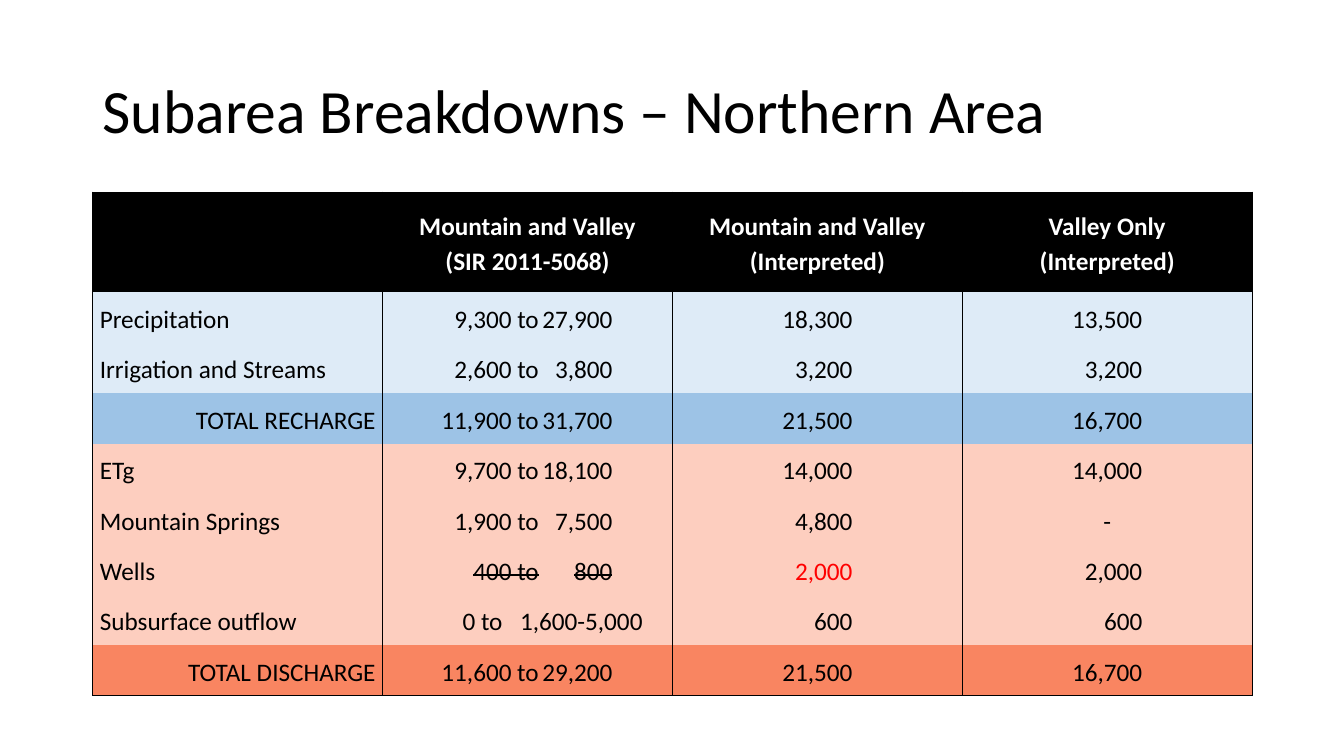
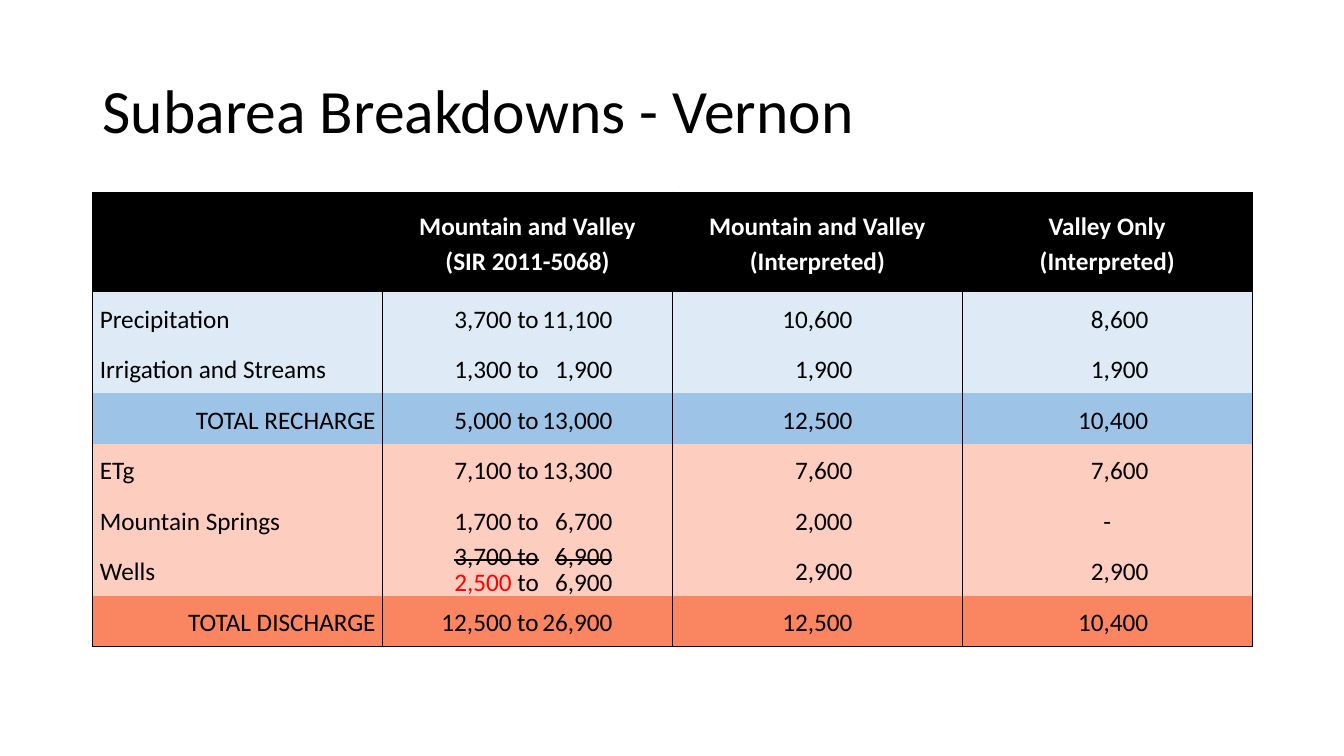
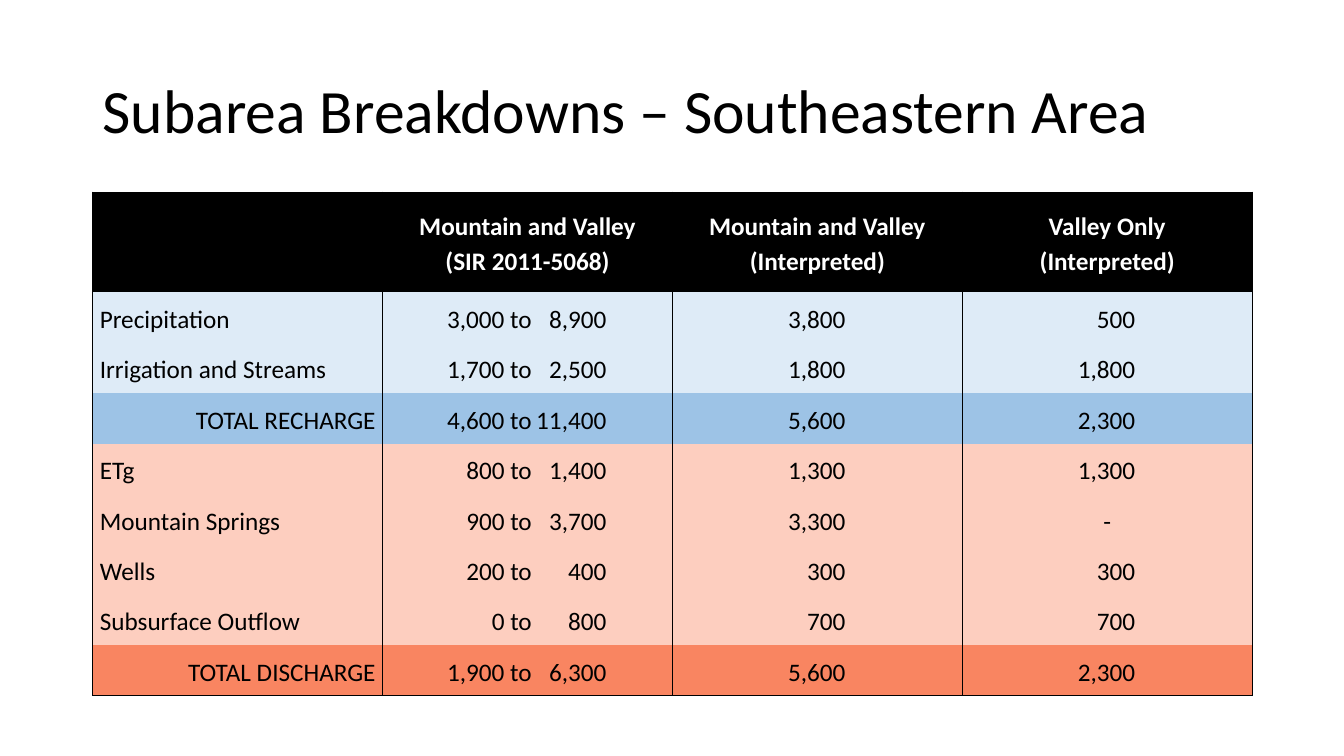
import pptx
import pptx.dml.color
import pptx.enum.text
import pptx.oxml
import pptx.oxml.ns
import pptx.util

Inches = pptx.util.Inches
Pt = pptx.util.Pt
RGBColor = pptx.dml.color.RGBColor
Align = pptx.enum.text.PP_ALIGN
Anchor = pptx.enum.text.MSO_ANCHOR

BLACK = RGBColor(0x00, 0x00, 0x00)
WHITE = RGBColor(0xFF, 0xFF, 0xFF)
RED = RGBColor(0xFF, 0x00, 0x00)
PALE_BLUE = RGBColor(0xDE, 0xEB, 0xF7)
BLUE = RGBColor(0x9D, 0xC3, 0xE6)
PALE_CORAL = RGBColor(0xFD, 0xCE, 0xBF)
CORAL = RGBColor(0xF9, 0x85, 0x61)

FONT = "Calibri"
PLAIN = {}
STRUCK = {"struck": True}
CORRECTED = {"colour": RED}
PLAIN_TABLE_STYLE = "{2D5ABB26-0587-4C30-8999-92F81FD0307C}"

HEADINGS = [
    [],
    ["Mountain and Valley", "(SIR 2011-5068)"],
    ["Mountain and Valley", "(Interpreted)"],
    ["Valley Only", "(Interpreted)"],
]

SUBAREAS = [
    {
        "title": "Subarea Breakdowns – Northern Area",
        "range_stops": (1.48, 2.21),
        "value_margins": (1.09, 1.09),
        "recharge": [
            ("Precipitation", "9,300 to\t27,900", "18,300", "13,500"),
            ("Irrigation and Streams", "2,600 to\t3,800", "3,200", "3,200"),
            ("TOTAL RECHARGE", "11,900 to\t31,700", "21,500", "16,700"),
        ],
        "discharge": [
            ("ETg", "9,700 to\t18,100", "14,000", "14,000"),
            ("Mountain Springs", "1,900 to\t7,500", "4,800", "-"),
            ("Wells", [[("400 to\t800", STRUCK)]], [[("2,000", CORRECTED)]], "2,000"),
            ("Subsurface outflow", "0 to\t1,600-5,000", "600", "600"),
            ("TOTAL DISCHARGE", "11,600 to\t29,200", "21,500", "16,700"),
        ],
        "special_stops": {"Subsurface outflow": (1.12, 2.51)},
    },
    {
        "title": "Subarea Breakdowns - Vernon",
        "range_stops": (1.48, 2.21),
        "value_margins": (1.09, 1.03),
        "recharge": [
            ("Precipitation", "3,700 to\t11,100", "10,600", "8,600"),
            ("Irrigation and Streams", "1,300 to\t1,900", "1,900", "1,900"),
            ("TOTAL RECHARGE", "5,000 to\t13,000", "12,500", "10,400"),
        ],
        "discharge": [
            ("ETg", "7,100 to\t13,300", "7,600", "7,600"),
            ("Mountain Springs", "1,700 to\t6,700", "2,000", "-"),
            ("Wells", [[("3,700 to\t6,900", STRUCK)],
                       [("2,500", CORRECTED), (" to\t6,900", PLAIN)]], "2,900", "2,900"),
            ("TOTAL DISCHARGE", "12,500 to\t26,900", "12,500", "10,400"),
        ],
        "special_stops": {},
    },
    {
        "title": "Subarea Breakdowns – Southeastern Area",
        "range_stops": (1.41, 2.15),
        "value_margins": (1.16, 1.16),
        "recharge": [
            ("Precipitation", "3,000 to\t8,900", "3,800", "500"),
            ("Irrigation and Streams", "1,700 to\t2,500", "1,800", "1,800"),
            ("TOTAL RECHARGE", "4,600 to\t11,400", "5,600", "2,300"),
        ],
        "discharge": [
            ("ETg", "800 to\t1,400", "1,300", "1,300"),
            ("Mountain Springs", "900 to\t3,700", "3,300", "-"),
            ("Wells", "200 to\t400", "300", "300"),
            ("Subsurface Outflow", "0 to\t800", "700", "700"),
            ("TOTAL DISCHARGE", "1,900 to\t6,300", "5,600", "2,300"),
        ],
        "special_stops": {},
    },
]


def add_span(para, text, size=18, colour=BLACK, bold=False, struck=False):
    span = para.add_run()
    span.text = text
    span.font.name = FONT
    span.font.size = Pt(size)
    span.font.bold = bold
    span.font.color.rgb = colour
    if struck:
        span.font._element.set("strike", "sngStrike")


def add_tab_stops(para, stops):
    tabs = "".join(f'<a:tab pos="{Inches(stop)}" algn="r"/>' for stop in stops)
    para._p.get_or_add_pPr().append(pptx.oxml.parse_xml(
        f'<a:tabLst {pptx.oxml.ns.nsdecls("a")}>{tabs}</a:tabLst>'))


def format_cell(cell, fill, sides):
    cell.fill.solid()
    cell.fill.fore_color.rgb = fill
    cell.vertical_anchor = Anchor.MIDDLE
    cell.margin_left = cell.margin_right = Inches(0.07)
    cell.margin_top = cell.margin_bottom = 0
    for order, side in enumerate(sides):
        cell._tc.tcPr.insert(order, pptx.oxml.parse_xml(
            f'<a:ln{side} {pptx.oxml.ns.nsdecls("a")} w="{Pt(1)}"><a:solidFill>'
            f'<a:srgbClr val="{BLACK}"/></a:solidFill></a:ln{side}>'))


def write_cell(cell, lines, align, stops=(), **style):
    for number, line in enumerate(lines):
        frame = cell.text_frame
        para = frame.add_paragraph() if number else frame.paragraphs[0]
        para.alignment = align
        para.line_spacing = 0.85 if stops and len(lines) > 1 else 1.15
        if stops:
            add_tab_stops(para, stops)
            add_span(para, "\t")
        for text, look in line:
            add_span(para, text, **{**style, **look})


def as_lines(content):
    return [[(content, PLAIN)]] if isinstance(content, str) else content


def add_title(page, title):
    box = page.shapes.add_textbox(Inches(0.92), Inches(0.4), Inches(11.5), Inches(1.45))
    box.text_frame.word_wrap = True
    box.text_frame.vertical_anchor = Anchor.MIDDLE
    para = box.text_frame.paragraphs[0]
    para.line_spacing = 0.9
    add_span(para, title, size=44)


def add_budget_table(page, subarea):
    rows = []
    for part, fill, total_fill in (("recharge", PALE_BLUE, BLUE),
                                   ("discharge", PALE_CORAL, CORAL)):
        for row in subarea[part]:
            total = row is subarea[part][-1]
            rows.append((row, total, total_fill if total else fill))

    frame = page.shapes.add_table(len(rows) + 1, len(HEADINGS), Inches(0.92), Inches(1.9),
                                  Inches(11.5), Inches(1 + 0.5 * len(rows)))
    table = frame.table
    table.horz_banding = False
    table._tbl.tblPr.find(pptx.oxml.ns.qn("a:tableStyleId")).text = PLAIN_TABLE_STYLE
    for number, table_row in enumerate(table.rows):
        table_row.height = Inches(0.5 if number else 1)

    for column, heading in enumerate(HEADINGS):
        cell = table.cell(0, column)
        format_cell(cell, BLACK, "LR")
        write_cell(cell, [[(text, PLAIN)] for text in heading], Align.CENTER,
                   colour=WHITE, bold=True)

    for number, (row, total, fill) in enumerate(rows, start=1):
        label = row[0]
        for column, content in enumerate(row):
            cell = table.cell(number, column)
            format_cell(cell, fill, "LRB" if number == len(rows) else "LR")
            align, stops = Align.LEFT, ()
            if column == 0:
                align = Align.RIGHT if total else Align.LEFT
            elif column == 1:
                stops = subarea["special_stops"].get(label, subarea["range_stops"])
            elif content == "-":
                align = Align.CENTER
            else:
                align = Align.RIGHT
                cell.margin_right = Inches(subarea["value_margins"][column - 2])
            write_cell(cell, as_lines(content), align, stops)


def main():
    deck = pptx.Presentation()
    deck.slide_width = Inches(13.33)
    deck.slide_height = Inches(7.5)
    for subarea in SUBAREAS:
        page = deck.slides.add_slide(deck.slide_layouts[6])
        add_title(page, subarea["title"])
        add_budget_table(page, subarea)
    deck.save("out.pptx")


if __name__ == "__main__":
    main()
